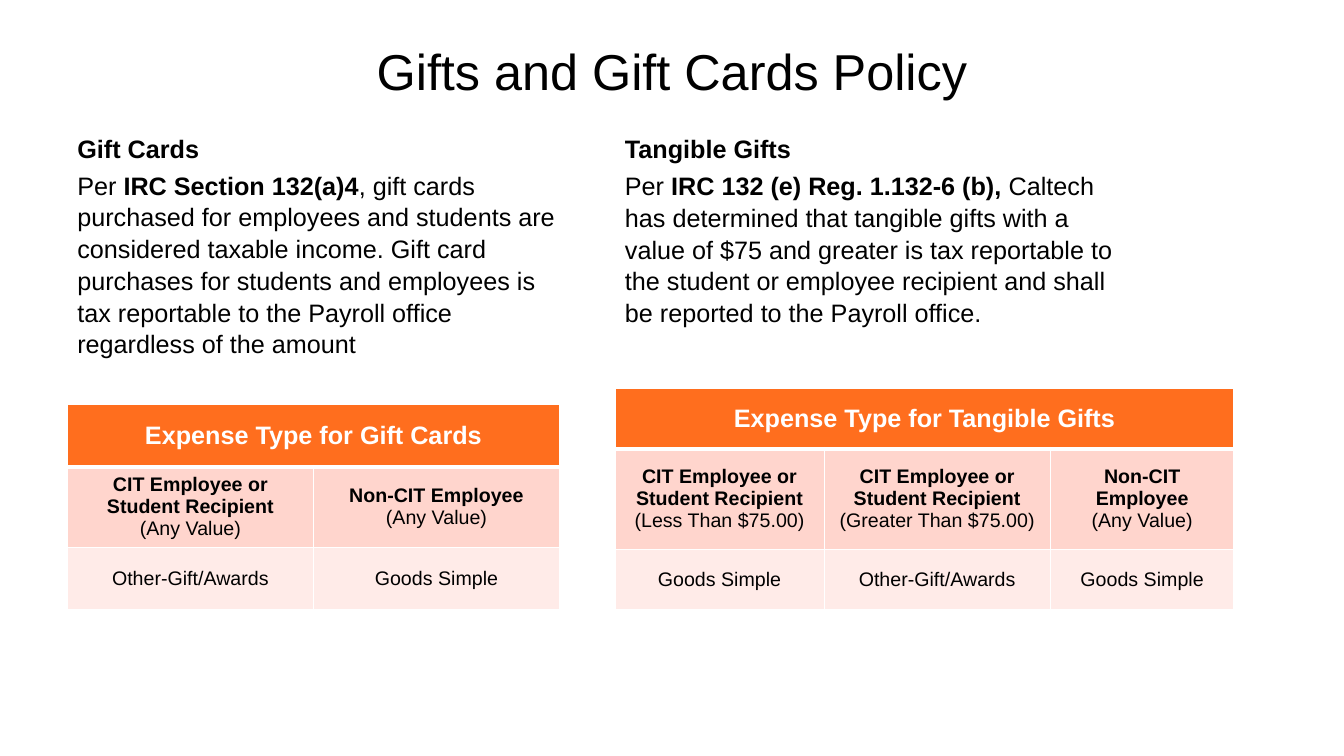
from dataclasses import dataclass

from lxml import etree
from pptx import Presentation
from pptx import util as u
from pptx.dml import color
from pptx.enum import text
from pptx.oxml import ns


@dataclass(frozen=True)
class Theme:
    font: str = "Arial"
    ink: str = "000000"
    white: str = "FFFFFF"
    header: str = "FF6E1E"
    recipient: str = "FFD5CD"
    expense: str = "FFEBE8"
    title_size: int = 36
    body_size: int = 18
    cell_size: int = 14
    thin: int = 1
    thick: int = 3


THEME = Theme()
CENTER = text.PP_ALIGN.CENTER
MIDDLE = text.MSO_ANCHOR.MIDDLE
ANY_VALUE = ("(Any Value)", False)
EMPLOYEE = [("CIT Employee or Student Recipient", True)]
NON_EMPLOYEE = [[("Non-CIT Employee\n", True), ANY_VALUE]]


def apply(target, values):
    for name, value in values.items():
        setattr(target, name, value)


def write(frame, paragraphs, size, ink=THEME.ink, **para_format):
    """Fill a text frame; each paragraph is a list of (words, bold) spans."""
    for index, spans in enumerate(paragraphs):
        para = frame.add_paragraph() if index else frame.paragraphs[0]
        apply(para, para_format)
        if index == 0:
            para.space_before = u.Pt(0)
        for words, bold in spans:
            span = para.add_run()
            span.text = words.rstrip("\n")
            apply(span.font, {"name": THEME.font, "size": u.Pt(size), "bold": bold})
            span.font.color.rgb = color.RGBColor.from_string(ink)
            if words.endswith("\n"):
                para.add_line_break()


def add_text(page, place, paragraphs, size, anchor, **para_format):
    box = page.shapes.add_textbox(*map(u.Cm, place))
    apply(box.text_frame, {"word_wrap": True, "vertical_anchor": anchor})
    write(box.text_frame, paragraphs, size, **para_format)


def set_borders(cell, widths):
    properties = cell._tc.get_or_add_tcPr()
    for side in "LRTB":
        width = u.Pt(widths.get(side, THEME.thin))
        line = etree.SubElement(properties, ns.qn(f"a:ln{side}"), w=str(width))
        fill = etree.SubElement(line, ns.qn("a:solidFill"))
        etree.SubElement(fill, ns.qn("a:srgbClr"), val=THEME.white)


def add_expense_table(page, left, top, widths, heights, heading, recipients, expenses):
    columns = len(widths)
    table = page.shapes.add_table(
        3, columns, u.Cm(left), u.Cm(top), u.Cm(sum(widths)), u.Cm(sum(heights))).table
    for column, width in zip(table.columns, widths):
        column.width = u.Cm(width)
    for row, height in zip(table.rows, heights):
        row.height = u.Cm(height)

    # The heading spans the table, above a thick rule
    headings = [[[(heading, True)]]] + [None] * (columns - 1)
    types = [[[(expense, False)]] for expense in expenses]
    rows = [
        (headings, THEME.header, THEME.body_size, THEME.white, {"B": THEME.thick}),
        (recipients, THEME.recipient, THEME.cell_size, THEME.ink, {"T": THEME.thick}),
        (types, THEME.expense, THEME.cell_size, THEME.ink, {}),
    ]
    for row_index, (contents, fill, size, ink, borders) in enumerate(rows):
        for column_index, content in enumerate(contents):
            cell = table.cell(row_index, column_index)
            set_borders(cell, borders)
            cell.fill.solid()
            cell.fill.fore_color.rgb = color.RGBColor.from_string(fill)
            cell.vertical_anchor = MIDDLE
            if content:
                write(cell.text_frame, content, size, ink, alignment=CENTER)
    table.cell(0, 0).merge(table.cell(0, columns - 1))


def main():
    deck = Presentation()
    apply(deck, {"slide_width": u.Cm(33.87), "slide_height": u.Cm(19.05)})
    page = deck.slides.add_slide(deck.slide_layouts[6])
    left, right, body_top, body_width = 1.7, 15.5, 2.8, 12.88
    body = {"size": THEME.body_size, "anchor": text.MSO_ANCHOR.BOTTOM,
            "space_before": u.Pt(3.6), "line_spacing": 1.05}

    # Title
    add_text(page, (left, 0.76, 30.48, 2.03), [[("Gifts and Gift Cards Policy", False)]],
             THEME.title_size, MIDDLE, alignment=CENTER)

    # Gift cards
    add_text(page, (left, body_top, body_width, 6.37), [
        [("Gift Cards", True)],
        [("Per ", False), ("IRC Section 132(a)4", True),
         (", gift cards purchased for employees and students are considered taxable "
          "income. Gift card purchases for students and employees is tax reportable "
          "to the Payroll office regardless of the amount", False)],
    ], **body)
    add_expense_table(
        page, left, 10.19, [6.2] * 2, [1.57] * 3, "Expense Type for Gift Cards",
        [[EMPLOYEE, [ANY_VALUE]], NON_EMPLOYEE],
        ["Other-Gift/Awards", "Goods Simple"])

    # Tangible gifts
    add_text(page, (right, body_top, body_width, 5.58), [
        [("Tangible Gifts", True)],
        [("Per ", False), ("IRC 132 (e) Reg. 1.132-6 (b), ", True),
         ("Caltech has determined that tangible gifts with a value of $75 and greater "
          "is tax reportable to the student or employee recipient and shall be "
          "reported to the Payroll office.", False)],
    ], **body)
    add_expense_table(
        page, right, 9.78, [5.27, 5.7, 4.63], [1.53, 2.53, 1.53],
        "Expense Type for Tangible Gifts",
        [[EMPLOYEE, [("(Less Than $75.00)", False)]],
         [EMPLOYEE, [("(Greater Than $75.00)", False)]], NON_EMPLOYEE],
        ["Goods Simple", "Other-Gift/Awards", "Goods Simple"])

    deck.save("out.pptx")


if __name__ == "__main__":
    main()
